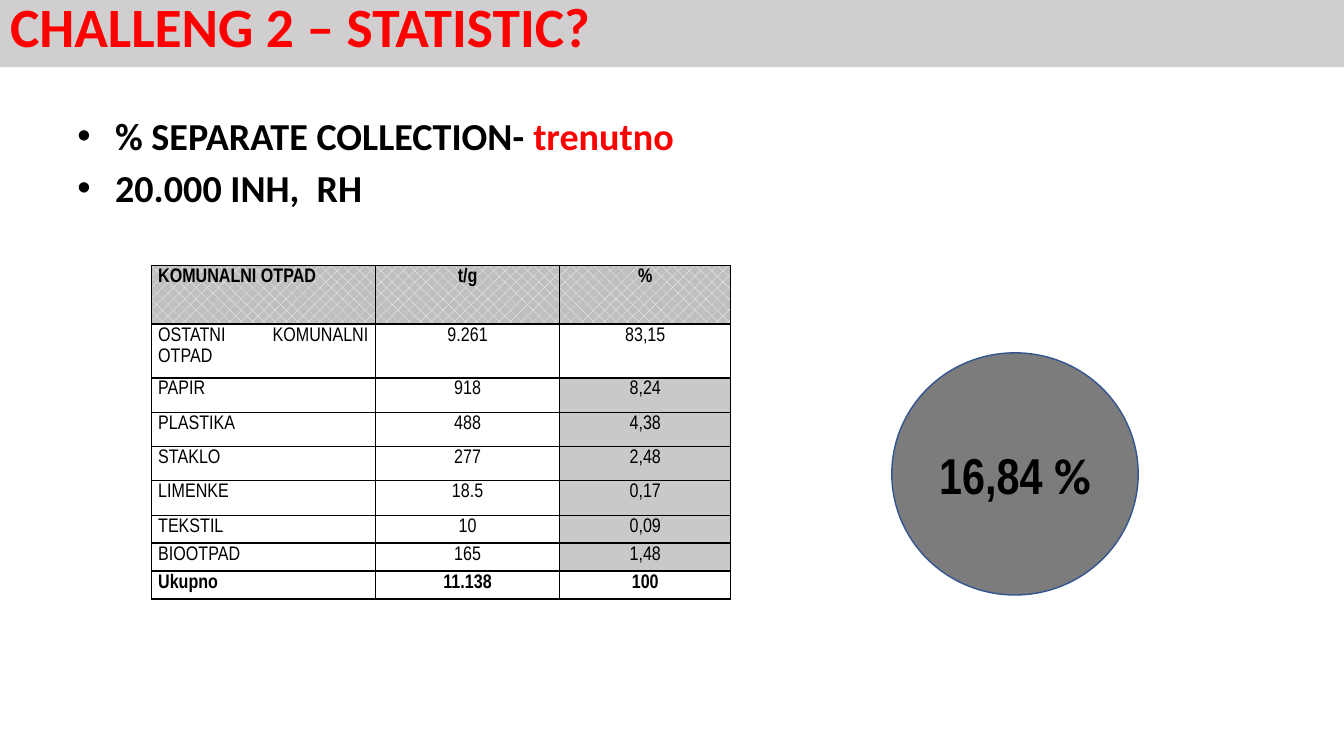
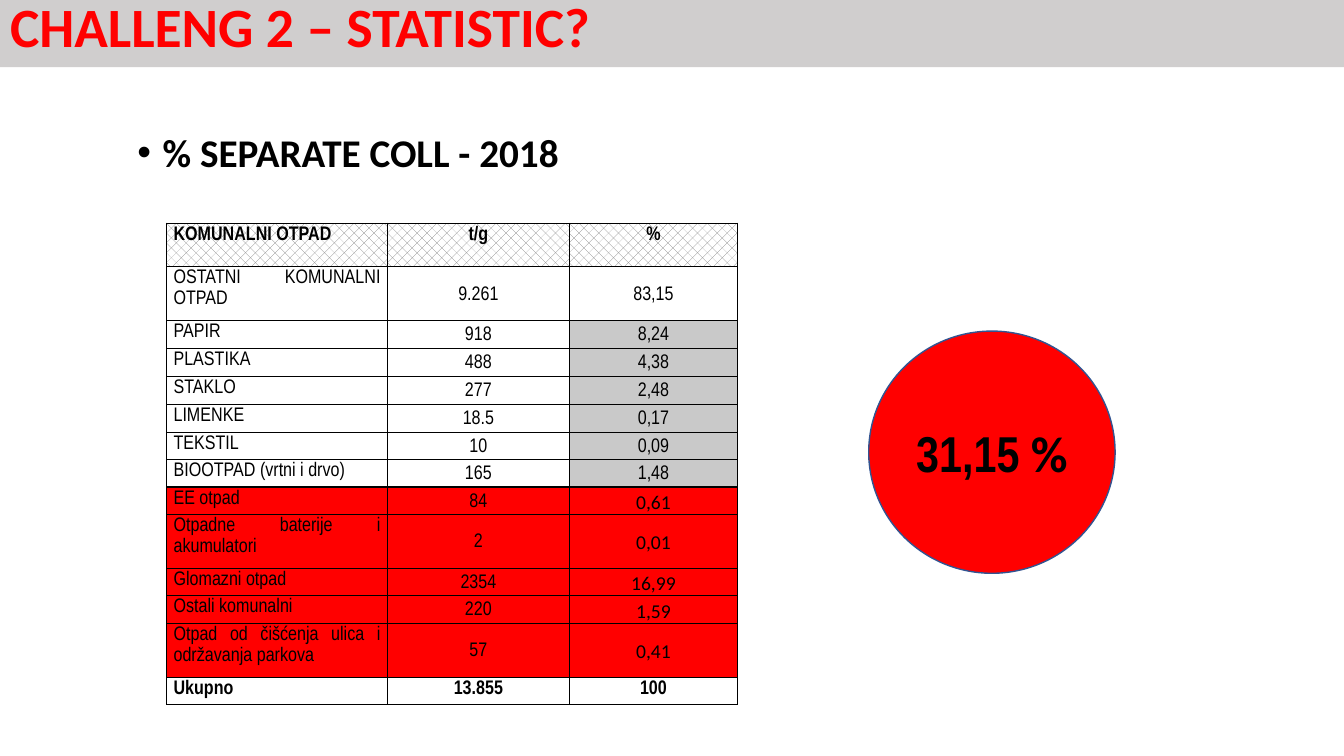
import dataclasses

import lxml.etree
import pptx
import pptx.dml.color
import pptx.enum.dml
import pptx.enum.shapes
import pptx.enum.text
import pptx.oxml
import pptx.oxml.ns
import pptx.util

Pt = pptx.util.Pt
RGB = pptx.dml.color.RGBColor.from_string
ALIGN = pptx.enum.text.PP_ALIGN
ANCHOR = pptx.enum.text.MSO_ANCHOR
PATTERN = pptx.enum.dml.MSO_PATTERN
qn = pptx.oxml.ns.qn


@dataclasses.dataclass(frozen=True)
class Theme:
    black: str = "000000"
    white: str = "FFFFFF"
    red: str = "FF0000"
    band: str = "D0CECE"
    silver: str = "BFBFBF"
    hatch: str = "808080"
    shade: str = "C9C9C9"
    grey: str = "7C7C7C"
    outline: str = "325491"
    sans: str = "Calibri"
    narrow: str = "Arial Narrow"
    title_size: float = 39.6
    cell_size: float = 14
    share_size: float = 36


T = Theme()
SLIDE_W, SLIDE_H = 960, 540
COLUMN_SHARES = (0.387, 0.318, 0.295)
ONE_LINE, TWO_LINES = 19.5, 38.5


# Shared helpers
def apply(obj, formats):
    for name, value in formats.items():
        setattr(obj, name, value)


def add_run(p, text, size, font=T.sans, color=T.black, bold=True):
    r = p.add_run()
    r.text = text
    apply(r.font, dict(size=Pt(size), name=font, bold=bold))
    r.font.color.rgb = RGB(color)


def place(sp, box):
    apply(sp, dict(zip(("left", "top", "width", "height"), map(Pt, box))))


def fill_solid(fill, color):
    fill.solid()
    fill.fore_color.rgb = RGB(color)


# Title band across the top
def title_band(slide, text, box):
    sp = slide.shapes.title
    place(sp, box)
    fill_solid(sp.fill, T.band)
    tf = sp.text_frame
    apply(tf, dict(vertical_anchor=ANCHOR.TOP, word_wrap=True,
                   auto_size=pptx.enum.text.MSO_AUTO_SIZE.NONE))
    p = tf.paragraphs[0]
    apply(p, dict(alignment=ALIGN.LEFT, line_spacing=0.8))
    add_run(p, text, T.title_size, color=T.red)


# Bulleted statements, each a list of (text, colour) runs
def bullet_list(slide, items, box, size, indent, formats):
    sp = slide.placeholders[1]
    place(sp, box)
    tf = sp.text_frame
    apply(tf, dict(vertical_anchor=ANCHOR.TOP, word_wrap=True,
                   auto_size=pptx.enum.text.MSO_AUTO_SIZE.NONE))
    for i, runs in enumerate(items):
        p = tf.add_paragraph() if i else tf.paragraphs[0]
        apply(p, formats)
        pPr = p._p.get_or_add_pPr()
        pPr.set("marL", str(Pt(indent)))
        pPr.set("indent", str(-Pt(indent)))
        for text, color in runs:
            add_run(p, text, size, color=color)


# Waste table
def cell_borders(cell):
    tcPr = cell._tc.get_or_add_tcPr()
    for i, side in enumerate(("a:lnL", "a:lnR", "a:lnT", "a:lnB")):
        ln = lxml.etree.Element(qn(side), w=str(Pt(1)))
        solid = lxml.etree.SubElement(ln, qn("a:solidFill"))
        lxml.etree.SubElement(solid, qn("a:srgbClr"), val=T.black)
        tcPr.insert(i, ln)


def fill_cell(cell, kind, column, header):
    if kind == "header":
        pattern, fore, back = header
        cell.fill.patterned()
        cell.fill.pattern = pattern
        cell.fill.fore_color.rgb = RGB(fore)
        cell.fill.back_color.rgb = RGB(back)
    elif kind == "added":
        fill_solid(cell.fill, T.red)
    elif kind == "separate" and column == 2:
        fill_solid(cell.fill, T.shade)
    else:
        fill_solid(cell.fill, T.white)


def waste_table(slide, rows, heights, origin, width, header, number_anchor):
    frame = slide.shapes.add_table(len(rows), len(COLUMN_SHARES), *map(
        Pt, (*origin, width, sum(heights))))
    table = frame.table
    apply(table, dict(first_row=False, horz_banding=False))
    for column, share in zip(table.columns, COLUMN_SHARES):
        column.width = Pt(round(width * share, 2))
    for i, (kind, *texts) in enumerate(rows):
        table.rows[i].height = Pt(heights[i])
        strong = kind in ("header", "total")
        for j, text in enumerate(texts):
            cell = table.cell(i, j)
            apply(cell, dict(
                margin_left=Pt(5), margin_right=Pt(5),
                margin_top=0, margin_bottom=0,
                vertical_anchor=ANCHOR.TOP if strong or not j else number_anchor))
            fill_cell(cell, kind, j, header)
            cell_borders(cell)
            p = cell.text_frame.paragraphs[0]
            apply(p, dict(alignment=ALIGN.CENTER if j else ALIGN.JUSTIFY,
                          line_spacing=1.15))
            font = T.sans if kind == "added" and j == 2 else T.narrow
            add_run(p, text, T.cell_size, font, bold=strong)


# Circle with the total share
def share_circle(slide, value, color, box):
    sp = slide.shapes.add_shape(pptx.enum.shapes.MSO_SHAPE.OVAL, *map(Pt, box))
    sp.shadow.inherit = False
    fill_solid(sp.fill, color)
    sp.line.color.rgb = RGB(T.outline)
    sp.line.width = Pt(1)
    tf = sp.text_frame
    apply(tf, dict(vertical_anchor=ANCHOR.MIDDLE, word_wrap=True))
    p = tf.paragraphs[0]
    p.alignment = ALIGN.CENTER
    add_run(p, value, T.share_size, T.narrow)
    add_run(p, " %", T.share_size)


def statistic_slide(prs, bullets, table, circle):
    slide = prs.slides.add_slide(prs.slide_layouts[1])
    title_band(slide, "CHALLENG 2 – STATISTIC?", (0, 0, SLIDE_W, 48))
    bullet_list(slide, **bullets)
    waste_table(slide, **table)
    share_circle(slide, **circle)


# Table rows: kind, waste type, tonnes a year, percent
def table_rows(bio_label, added, total):
    return [
        ("header", "KOMUNALNI OTPAD", "t/g", "%"),
        ("residual", "OSTATNI KOMUNALNI OTPAD", "9.261", "83,15"),
        ("separate", "PAPIR", "918", "8,24"),
        ("separate", "PLASTIKA", "488", "4,38"),
        ("separate", "STAKLO", "277", "2,48"),
        ("separate", "LIMENKE", "18.5", "0,17"),
        ("separate", "TEKSTIL", "10", "0,09"),
        ("separate", bio_label, "165", "1,48"),
        *added,
        ("total", "Ukupno", total, "100"),
    ]


ADDED_ROWS = [
    ("added", "EE otpad", "84", "0,61"),
    ("added", "Otpadne baterije i akumulatori", "2", "0,01"),
    ("added", "Glomazni otpad", "2354", "16,99"),
    ("added", "Ostali komunalni", "220", "1,59"),
    ("added", "Otpad od čišćenja ulica i održavanja parkova", "57", "0,41"),
]


def main():
    prs = pptx.Presentation()
    apply(prs, dict(slide_width=Pt(SLIDE_W), slide_height=Pt(SLIDE_H)))

    # Current collection
    statistic_slide(
        prs,
        bullets=dict(
            items=[[("% SEPARATE COLLECTION- ", T.black), ("trenutno", T.red)],
                   [("20.000 INH,  RH", T.black)]],
            box=(48, 77, 618, 68), size=27.2, indent=27,
            formats=dict(space_before=Pt(4))),
        table=dict(
            rows=table_rows("BIOOTPAD", [], "11.138"),
            heights=[42, TWO_LINES] + [24.5] * 4 + [20] * 3,
            origin=(108, 189.5), width=414,
            header=(PATTERN.PERCENT_25, T.white, T.silver),
            number_anchor=ANCHOR.TOP),
        circle=dict(value="16,84", color=T.grey, box=(637, 252, 176, 173)))

    # Collection in 2018
    statistic_slide(
        prs,
        bullets=dict(
            items=[[("% SEPARATE COLL - 2018", T.black)]],
            box=(91, 91.5, 618, 68), size=28, indent=18,
            formats=dict(space_before=Pt(10), line_spacing=0.9)),
        table=dict(
            rows=table_rows("BIOOTPAD (vrtni i drvo)", ADDED_ROWS, "13.855"),
            heights=[31, TWO_LINES] + [20] * 4 + [ONE_LINE] * 3
            + [TWO_LINES] + [ONE_LINE] * 2 + [TWO_LINES, ONE_LINE],
            origin=(119, 159.5), width=408,
            header=(PATTERN.PERCENT_30, T.hatch, T.white),
            number_anchor=ANCHOR.MIDDLE),
        circle=dict(value="31,15", color=T.red, box=(620.5, 236.5, 176, 173)))

    prs.save("out.pptx")


if __name__ == "__main__":
    main()
